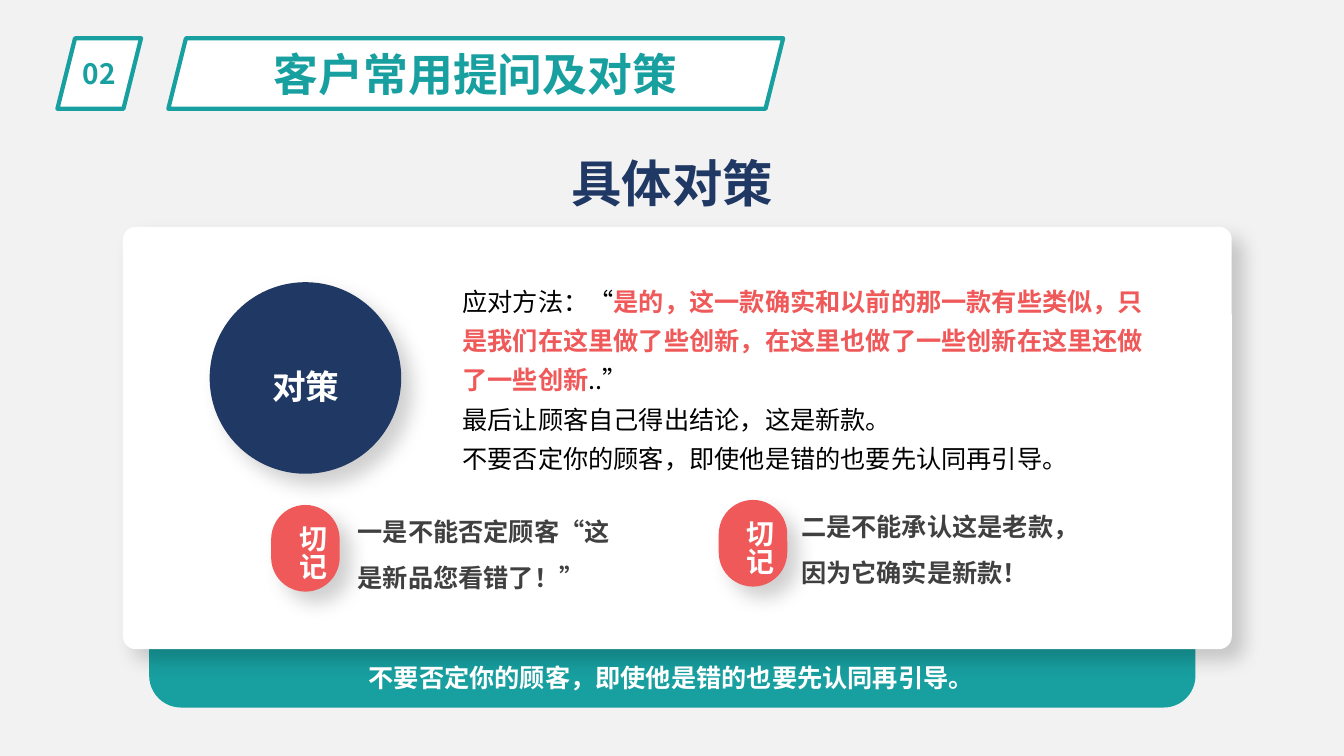
import dataclasses

import pptx
import pptx.dml.color
import pptx.enum.shapes
import pptx.enum.text
import pptx.oxml
import pptx.oxml.ns
import pptx.util

FORM = pptx.enum.shapes.MSO_SHAPE
ALIGN = pptx.enum.text.PP_ALIGN
ANCHOR = pptx.enum.text.MSO_ANCHOR
FIT = pptx.enum.text.MSO_AUTO_SIZE


@dataclasses.dataclass(frozen=True)
class Theme:
    font: str = "Noto Sans CJK SC"
    # Colours
    back: str = "F2F2F2"
    white: str = "FFFFFF"
    teal: str = "189FA0"
    navy: str = "203864"
    coral: str = "F05959"
    black: str = "000000"
    gray: str = "404040"
    # Type sizes
    head: int = 36
    title: int = 32
    label: int = 24
    badge: int = 20
    body: int = 18


class Page:
    """Places elements on a grid of 160 columns by 90 rows."""

    def __init__(self, deck, theme):
        self.theme = theme
        self.col = deck.slide_width / 160
        self.row = deck.slide_height / 90
        self.slide = deck.slides.add_slide(deck.slide_layouts[6])
        fill = self.slide.background.fill
        fill.solid()
        fill.fore_color.rgb = self.tint(theme.back)

    def tint(self, color):
        return pptx.dml.color.RGBColor.from_string(color)

    def place(self, box):
        x, y, w, h = box
        return (int(x * self.col), int(y * self.row),
                int(w * self.col), int(h * self.row))

    def shape(self, form, box, color, edge=None, round=None, shade=False):
        item = self.slide.shapes.add_shape(form, *self.place(box))
        item.shadow.inherit = False
        item.fill.solid()
        item.fill.fore_color.rgb = self.tint(color)
        if edge:
            item.line.color.rgb = self.tint(edge)
            item.line.width = pptx.util.Pt(3)
        else:
            item.line.fill.background()
        if round is not None:
            item.adjustments[0] = round
        if shade:
            self.shade(item)
        return item

    def shade(self, item):
        """Soft shadow to the lower right."""
        space = pptx.oxml.ns.nsdecls("a")
        blur, dist = pptx.util.Pt(14), pptx.util.Pt(11)
        glow = pptx.oxml.parse_xml(
            f'<a:outerShdw {space} blurRad="{blur}" dist="{dist}" dir="2700000"'
            ' algn="tl" rotWithShape="0">'
            f'<a:srgbClr val="{self.theme.black}"><a:alpha val="18000"/></a:srgbClr>'
            '</a:outerShdw>')
        item.element.spPr.find(pptx.oxml.ns.qn("a:effectLst")).append(glow)

    def style(self, run, size, color, bold):
        font = run.font
        font.name, font.size, font.bold = self.theme.font, pptx.util.Pt(size), bold
        font.color.rgb = self.tint(color)
        east = pptx.oxml.parse_xml(
            f'<a:ea {pptx.oxml.ns.nsdecls("a")} typeface="{self.theme.font}"/>')
        font._element.find(pptx.oxml.ns.qn("a:latin")).addnext(east)

    def label(self, item, text, size, color, bold=True, align=ALIGN.CENTER,
              lead=None, anchor=ANCHOR.MIDDLE, wrap=True, grow=False):
        frame = item.text_frame
        frame.text = text
        frame.word_wrap = wrap
        frame.vertical_anchor = anchor
        if grow:
            frame.auto_size = FIT.SHAPE_TO_FIT_TEXT
        for para in frame.paragraphs:
            para.alignment = align
            if lead:
                para.line_spacing = lead
            for run in para.runs:
                self.style(run, size, color, bold)
        return frame

    def text(self, box, text, size, color, **more):
        item = self.slide.shapes.add_textbox(*self.place(box))
        return self.label(item, text, size, color, **more)

    def banner(self, x, w, text, size):
        t = self.theme
        item = self.shape(FORM.PARALLELOGRAM, (x, 4.56, w, 8.4), t.white, edge=t.teal)
        self.label(item, text, size, t.teal)

    def tip(self, x, y, left, text):
        """Red pill with upright text, and the advice to its right."""
        t = self.theme
        self.text((left, y - 1, 35.28, 11.52), text, t.body, t.gray,
                  align=ALIGN.LEFT, lead=1.5, anchor=ANCHOR.TOP, grow=True)
        self.shape(FORM.ROUNDED_RECTANGLE, (x, y, 8.16, 10.32), t.coral,
                   round=0.5, shade=True)
        frame = self.text((x + 1, y + 1.2, 7.68, 7.92), "切记", t.badge, t.white,
                          lead=1.3, anchor=ANCHOR.TOP, wrap=False, grow=True)
        frame._txBody.bodyPr.set("vert", "eaVert")


def main():
    deck = pptx.Presentation()
    deck.slide_width = pptx.util.Inches(13.33)
    deck.slide_height = pptx.util.Inches(7.5)
    t = Theme()
    page = Page(deck, t)

    # Header
    page.banner(6.84, 9.96, "02", t.badge)
    page.banner(20.04, 73.2, "客户常用提问及对策", t.title)
    page.text((8.76, 17.64, 142.56, 8.16), "具体对策", t.head, t.navy)

    # Base strip and card
    base = page.shape(FORM.ROUND_2_SAME_RECTANGLE, (17.76, 61.44, 124.56, 22.8), t.teal)
    base.element.spPr.xfrm.set("flipV", "1")
    page.shape(FORM.ROUNDED_RECTANGLE, (14.64, 27, 132, 50.28), t.white,
               round=0.03, shade=True)

    # Disc with its label
    page.shape(FORM.OVAL, (24.96, 33.6, 22.8, 22.8), t.navy, shade=True)
    plate = page.shape(FORM.RECTANGLE, (30.48, 41.52, 11.88, 6.84), t.navy)
    page.label(plate, "对策", t.label, t.white, lead=1.3, anchor=ANCHOR.TOP, grow=True)

    # Advice
    body = page.text(
        (53.88, 32.4, 83.76, 24.84),
        "应对方法：“\n最后让顾客自己得出结论，这是新款。\n"
        "不要否定你的顾客，即使他是错的也要先认同再引导。",
        t.body, t.black, bold=False, align=ALIGN.LEFT, lead=1.3,
        anchor=ANCHOR.TOP, grow=True)
    quote = ("是的，这一款确实和以前的那一款有些类似，只是我们在这里做了些创新，"
             "在这里也做了一些创新在这里还做了一些创新")
    for part, color, bold in ((quote, t.coral, True), ("..”", t.black, False)):
        run = body.paragraphs[0].add_run()
        run.text = part
        page.style(run, t.body, color, bold)

    # Two tips
    page.tip(32.28, 60.12, 41.4, "一是不能否定顾客“这是新品您看错了！”")
    page.tip(85.56, 59.52, 94.2, "二是不能承认这是老款，因为它确实是新款！")

    # Closing line
    page.text((42.72, 78.24, 75.12, 4.8),
              "不要否定你的顾客，即使他是错的也要先认同再引导。", t.body, t.white,
              align=ALIGN.LEFT, anchor=ANCHOR.TOP, wrap=False, grow=True)

    deck.save("out.pptx")


if __name__ == "__main__":
    main()
